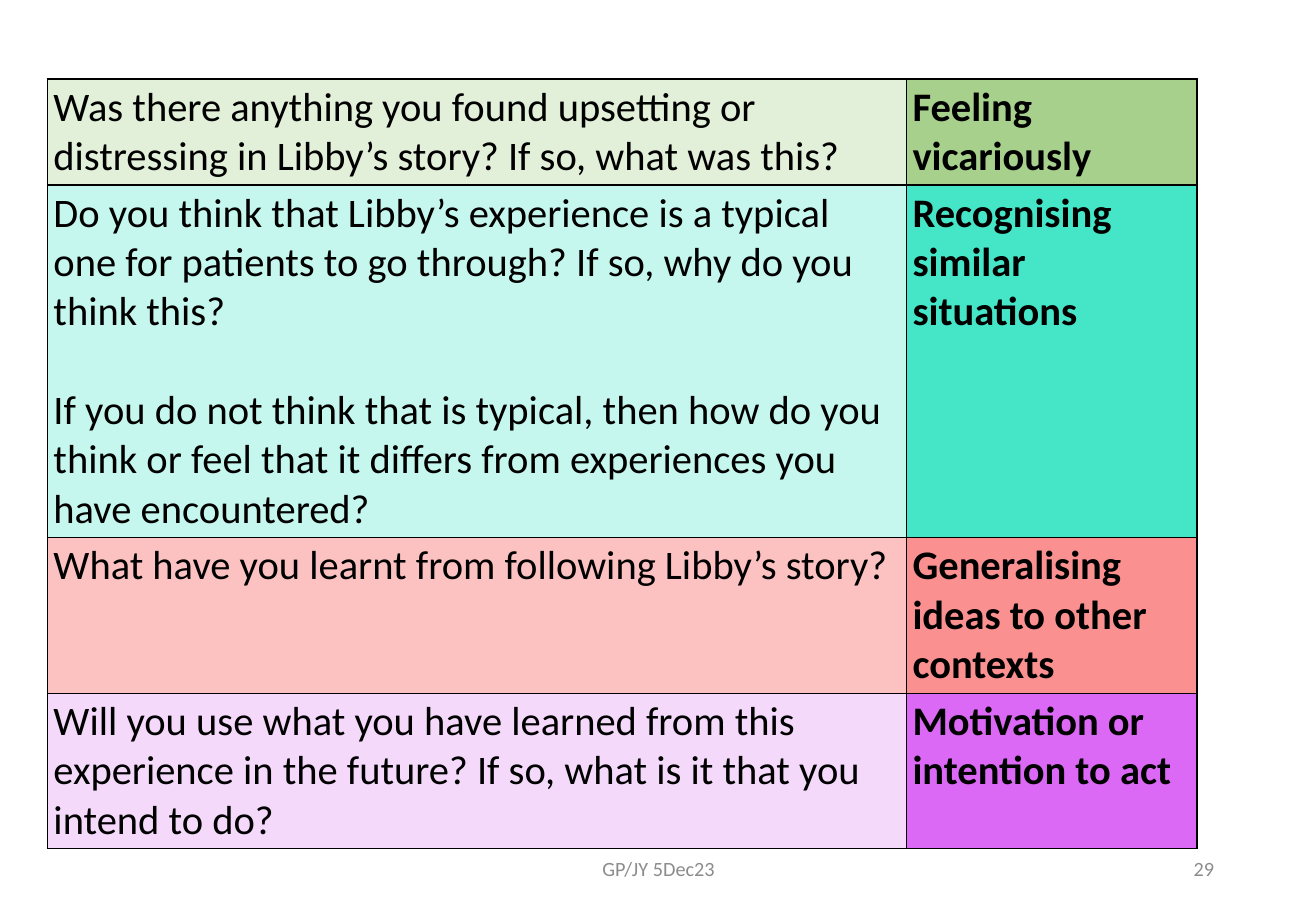
from lxml import etree
from pptx import Presentation
from pptx.dml.color import RGBColor
from pptx.enum.text import MSO_ANCHOR, PP_ALIGN
from pptx.oxml.ns import qn
from pptx.util import Pt

PX = 9144  # 100 px to the inch
FONT = "Calibri"
MIDDLE = MSO_ANCHOR.MIDDLE
CENTER, RIGHT = PP_ALIGN.CENTER, PP_ALIGN.RIGHT

BLACK = RGBColor(0x00, 0x00, 0x00)
GREY = RGBColor(0x8C, 0x8C, 0x8C)
PALE_GREEN = RGBColor(0xE2, 0xEF, 0xD9)
GREEN = RGBColor(0xA8, 0xD0, 0x8D)
PALE_TEAL = RGBColor(0xC6, 0xF7, 0xEE)
TEAL = RGBColor(0x45, 0xE6, 0xC8)
PALE_RED = RGBColor(0xFC, 0xC2, 0xC2)
RED = RGBColor(0xFA, 0x90, 0x90)
PALE_PURPLE = RGBColor(0xF4, 0xD9, 0xFA)
PURPLE = RGBColor(0xDB, 0x69, 0xF5)

COL_WIDTHS = (707, 239)
# Row height, question paragraphs, theme, question fill, theme fill
ROWS = [
    (86, ["Was there anything you found upsetting or distressing in Libby’s story? "
          "If so, what was this?"],
     "Feeling vicariously", PALE_GREEN, GREEN),
    (290, ["Do you think that Libby’s experience is a typical one for patients to go "
           "through? If so, why do you think this?",
           "If you do not think that is typical, then how do you think or feel that it "
           "differs from experiences you have encountered?"],
     "Recognising similar situations", PALE_TEAL, TEAL),
    (127, ["What have you learnt from following Libby’s story?"],
     "Generalising ideas to other contexts", PALE_RED, RED),
    (127, ["Will you use what you have learned from this experience in the future? "
           "If so, what is it that you intend to do?"],
     "Motivation or intention to act", PALE_PURPLE, PURPLE),
]


def style_runs(p, size, color, bold=False):
    for r in p.runs:
        r.font.name = FONT
        r.font.size = Pt(size)
        r.font.bold = bold
        r.font.color.rgb = color


def add_borders(cell):
    tcPr = cell._tc.get_or_add_tcPr()
    for i, side in enumerate(("lnL", "lnR", "lnT", "lnB")):
        ln = etree.Element(qn("a:" + side), w=str(Pt(1)))
        fill = etree.SubElement(ln, qn("a:solidFill"))
        etree.SubElement(fill, qn("a:srgbClr"), val=str(BLACK))
        tcPr.insert(i, ln)


def fill_cell(cell, paragraphs, color, bold):
    cell.margin_left = cell.margin_right = 5 * PX
    cell.margin_top = cell.margin_bottom = 3 * PX
    cell.fill.solid()
    cell.fill.fore_color.rgb = color
    add_borders(cell)
    tf = cell.text_frame
    tf.text = "\n".join(paragraphs)
    for i, p in enumerate(tf.paragraphs):
        style_runs(p, 24, BLACK, bold)
        if i:
            p.space_before = Pt(29)  # one line


def add_question_table(s, x, y):
    """Reflective questions on the left, their themes on the right."""
    width, height = sum(COL_WIDTHS), sum(row[0] for row in ROWS)
    table = s.shapes.add_table(len(ROWS), len(COL_WIDTHS), x * PX, y * PX,
                               width * PX, height * PX).table
    table.first_row = table.horz_banding = False
    for col, w in zip(table.columns, COL_WIDTHS):
        col.width = w * PX
    for i, (h, questions, theme, pale, strong) in enumerate(ROWS):
        table.rows[i].height = h * PX
        fill_cell(table.cell(i, 0), questions, pale, False)
        fill_cell(table.cell(i, 1), [theme], strong, True)


def add_footer_text(s, text, x, y, w, h, align):
    tf = s.shapes.add_textbox(x * PX, y * PX, w * PX, h * PX).text_frame
    tf.word_wrap = True
    tf.vertical_anchor = MIDDLE
    tf.text = text
    p = tf.paragraphs[0]
    p.alignment = align
    style_runs(p, 12, GREY)


def main():
    prs = Presentation()
    prs.slide_width, prs.slide_height = 1083 * PX, 750 * PX
    s = prs.slides.add_slide(prs.slide_layouts[6])
    add_question_table(s, 39, 65)
    # Footer and slide number
    add_footer_text(s, "GP/JY 5Dec23", 359, 695, 366, 40, CENTER)
    add_footer_text(s, "29", 765, 695, 244, 40, RIGHT)
    prs.save("out.pptx")


if __name__ == "__main__":
    main()
